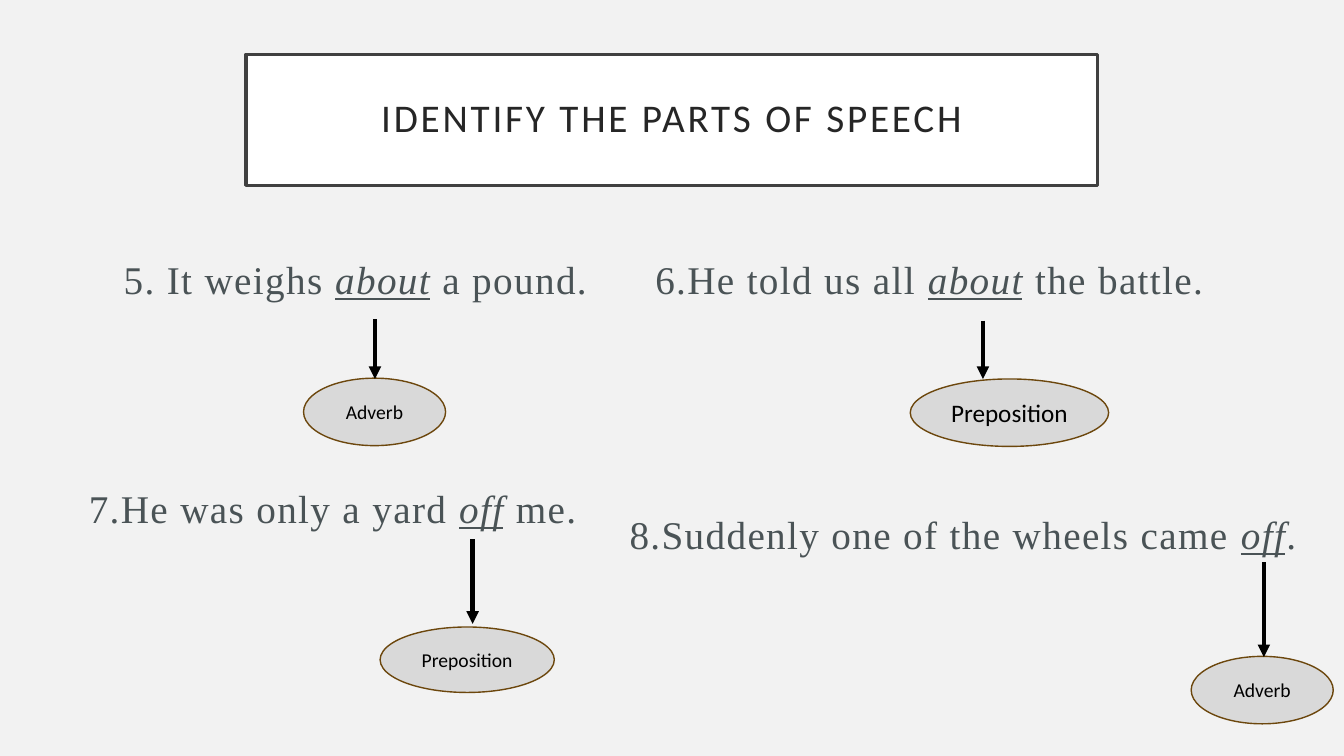
from pptx import Presentation
from pptx.dml.color import RGBColor
from pptx.enum.shapes import MSO_CONNECTOR, MSO_SHAPE
from pptx.enum.text import MSO_ANCHOR, PP_ALIGN
from pptx.oxml.ns import qn
from pptx.util import Cm, Pt
from lxml import etree

OVAL, LINE = MSO_SHAPE.OVAL, MSO_CONNECTOR.STRAIGHT
MID, CENTER = MSO_ANCHOR.MIDDLE, PP_ALIGN.CENTER

# Content: lengths in cm; boxes are left, top, width, height
TITLE = "IDENTIFY THE PARTS OF SPEECH"
TITLE_BOX = (6.2, 1.37, 21.46, 3.3)

# Each item: words before, marked word, words after, text box,
# answer, answer size, oval box, arrow (x, top, bottom)
ITEMS = [
    ("5. It weighs ", "about", " a pound.", (2.16, 5.69, 13.59, 2.69),
     "Adverb", "small", (7.65, 9.53, 3.58, 1.7), (9.45, 8.05, 9.55)),
    ("6.He told us all ", "about", " the battle.", (16.23, 5.79, 14.38, 2.46),
     "Preposition", "large", (22.94, 9.55, 5, 1.7), (24.77, 8.08, 9.55)),
    ("7.He was only a yard ", "off", " me.", (0.53, 11.46, 15.7, 2.69),
     "Preposition", "small", (9.58, 15.8, 4.39, 1.65), (11.91, 13.59, 15.72)),
    ("8.Suddenly one of the wheels came ", "off", ".", (15.49, 12.22, 17.55, 2.46),
     "Adverb", "small", (30.02, 16.54, 3.58, 1.7), (31.85, 14.17, 16.56)),
]

THEME = {
    "back": "F2F2F2", "panel": "FFFFFF", "frame": "404040", "oval": "D9D9D9",
    "rim": "6C470D", "arrow": "000000",
    "title": {"name": "Calibri", "size": Pt(28), "color": "262626", "bold": False},
    "body": {"name": "Times New Roman", "size": Pt(28), "color": "4A5356"},
    "small": {"name": "Calibri", "size": Pt(14), "color": "000000"},
    "large": {"name": "Calibri", "size": Pt(18), "color": "000000"},
}


def color(key):
    return RGBColor.from_string(THEME[key])


def apply(target, values):
    for name, value in values.items():
        setattr(target, name, value)


def place(shape, box):
    names = ("left", "top", "width", "height")
    apply(shape, dict(zip(names, map(Cm, box))))


def paint(shape, fill, line, width):
    shape.fill.solid()
    shape.fill.fore_color.rgb = color(fill)
    shape.line.color.rgb = color(line)
    shape.line.width = Pt(width)


def write(shape, runs, style, pad=(0.25, 0.13), track=0, para=None):
    """Fill a shape with runs given as (text, marked)."""
    frame = shape.text_frame
    side, edge = map(Cm, pad)
    apply(frame, {"word_wrap": True, "vertical_anchor": MID,
                  "margin_left": side, "margin_right": side,
                  "margin_top": edge, "margin_bottom": edge})
    line = frame.paragraphs[0]
    apply(line, {"alignment": CENTER, **(para or {})})
    look = dict(THEME[style])
    tint = RGBColor.from_string(look.pop("color"))
    for text, marked in runs:
        run = line.add_run()
        run.text = text
        apply(run.font, {**look, "italic": marked, "underline": marked})
        run.font.color.rgb = tint
        if track:
            run.font._element.set("spc", str(track * 100))


def arrow(shapes, x, top, end):
    link = shapes.add_connector(LINE, Cm(x), Cm(top), Cm(x), Cm(end))
    link.line.color.rgb = color("arrow")
    link.line.width = Pt(3)
    tip = etree.SubElement(link.line._get_or_add_ln(), qn("a:tailEnd"))
    tip.set("type", "triangle")
    etree.SubElement(link._element.spPr, qn("a:effectLst"))


def main():
    deck = Presentation()
    apply(deck, {"slide_width": Cm(33.87), "slide_height": Cm(19.05)})
    slide = deck.slides.add_slide(deck.slide_layouts[5])
    slide.background.fill.solid()
    slide.background.fill.fore_color.rgb = color("back")
    shapes = slide.shapes

    # Title panel
    title = shapes.title
    place(title, TITLE_BOX)
    paint(title, "panel", "frame", 2.5)
    write(title, [(TITLE, False)], "title", (0.51, 0.51), 2,
          {"line_spacing": 0.9})

    # Sentences, each with an arrow down to its answer
    for head, word, rest, box, answer, size, ring, stem in ITEMS:
        text = shapes.add_textbox(*map(Cm, box))
        write(text, [(head, False), (word, True), (rest, False)], "body",
              track=1, para={"space_before": Pt(10)})
        oval = shapes.add_shape(OVAL, *map(Cm, ring))
        oval.shadow.inherit = False
        paint(oval, "oval", "rim", 1)
        write(oval, [(answer, False)], size, (0, 0))
        arrow(shapes, *stem)

    deck.save("out.pptx")


if __name__ == "__main__":
    main()
